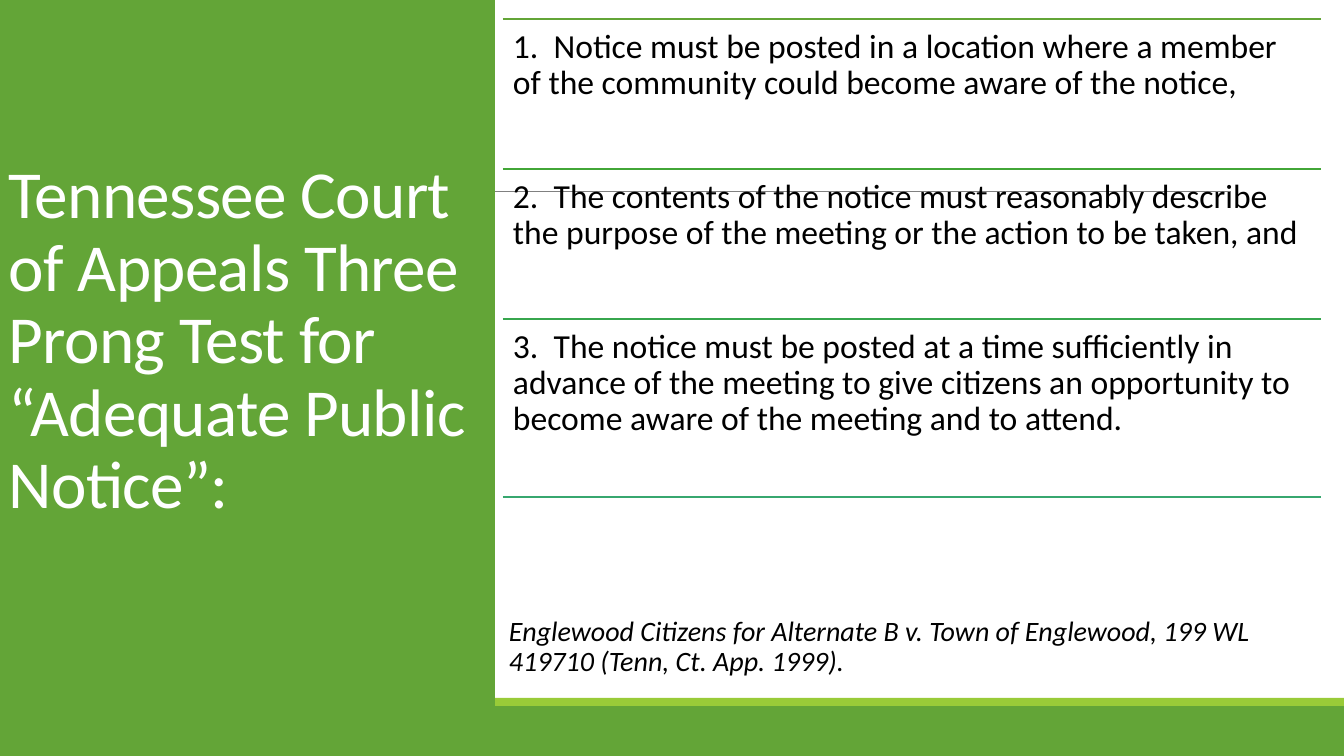
from lxml import etree
from pptx import Presentation
from pptx import util as u
from pptx.dml.color import RGBColor
from pptx.enum import shapes, text
from pptx.oxml.ns import qn

COLORS = {
    "green": "63A537", "lime": "99CB38", "gray": "808080",
    "white": "FFFFFF", "black": "000000",
}
TITLE = "Tennessee Court of Appeals Three Prong Test for “Adequate Public Notice”:"
PRONGS = [
    ("1.  Notice must be posted in a location where a member of the community could become aware of the notice,", "63A537", 19, 150),
    ("2.  The contents of the notice must reasonably describe the purpose of the meeting or the action to be taken, and", "42A637", 169, 150),
    ("3.  The notice must be posted at a time sufficiently in advance of the meeting to give citizens an opportunity to become aware of the meeting and to attend.", "37A64D", 319, 178),
]
CITATION = "Englewood Citizens for Alternate B v. Town of Englewood, 199 WL 419710 (Tenn, Ct. App. 1999)."
CITATION_RULE = "37A76F"
W, H = 1344, 756
LEFT, WIDTH = 503, 818
BANDS = [("green", 0, 706, W, 50), ("lime", 0, 698, W, 8)]
PANEL = ("green", -1, 0, 496, H)


def px(n):
    return u.Emu(round(n * 914400 / 100.8))


def add_rect(s, color, *box):
    sp = s.shapes.add_shape(shapes.MSO_SHAPE.RECTANGLE, *map(px, box))
    sp.shadow.inherit = False
    sp.fill.solid()
    sp.fill.fore_color.rgb = RGBColor.from_string(COLORS[color])
    sp.line.fill.background()
    return sp


def add_rule(s, x1, x2, y, color, width):
    ln = s.shapes.add_connector(shapes.MSO_CONNECTOR.STRAIGHT, px(x1), px(y), px(x2), px(y))
    ln.line.color.rgb = RGBColor.from_string(color)
    ln.line.width = u.Pt(width)
    etree.SubElement(ln._element.spPr, qn("a:effectLst"))


def write(sp, content, size, color="black", italic=False, inset=10, bottom=None,
          anchor=text.MSO_ANCHOR.TOP, spacing=None):
    tf = sp.text_frame
    tf.word_wrap = True
    tf.vertical_anchor = anchor
    tf.margin_left = tf.margin_right = tf.margin_top = px(inset)
    tf.margin_bottom = px(inset if bottom is None else bottom)
    p = tf.paragraphs[0]
    p.alignment = text.PP_ALIGN.LEFT
    p.line_spacing = 0.9
    r = p.add_run()
    r.text = content
    r.font.name = "Calibri"
    r.font.size = u.Pt(size)
    r.font.italic = italic
    r.font.color.rgb = RGBColor.from_string(COLORS[color])
    if spacing is not None:
        r._r.get_or_add_rPr().set("spc", str(spacing))


def main():
    prs = Presentation()
    prs.slide_width, prs.slide_height = px(W), px(H)
    s = prs.slides.add_slide(prs.slide_layouts[6])

    for band in BANDS:
        add_rect(s, *band)
    add_rule(s, 132, 1231, 191, COLORS["gray"], 0.5)
    write(add_rect(s, *PANEL), TITLE, 48, color="white", bottom=82,
          anchor=text.MSO_ANCHOR.MIDDLE, spacing=-50)

    for content, color, top, height in PRONGS:
        add_rule(s, LEFT, LEFT + WIDTH, top, color, 1.25)
        write(s.shapes.add_textbox(*map(px, (LEFT, top, WIDTH, height))), content, 24)

    add_rule(s, LEFT, LEFT + WIDTH, 497, CITATION_RULE, 1.25)
    write(s.shapes.add_textbox(*map(px, (LEFT, 611, WIDTH, 80))), CITATION, 20,
          italic=True, inset=6)
    prs.save("out.pptx")


if __name__ == "__main__":
    main()
